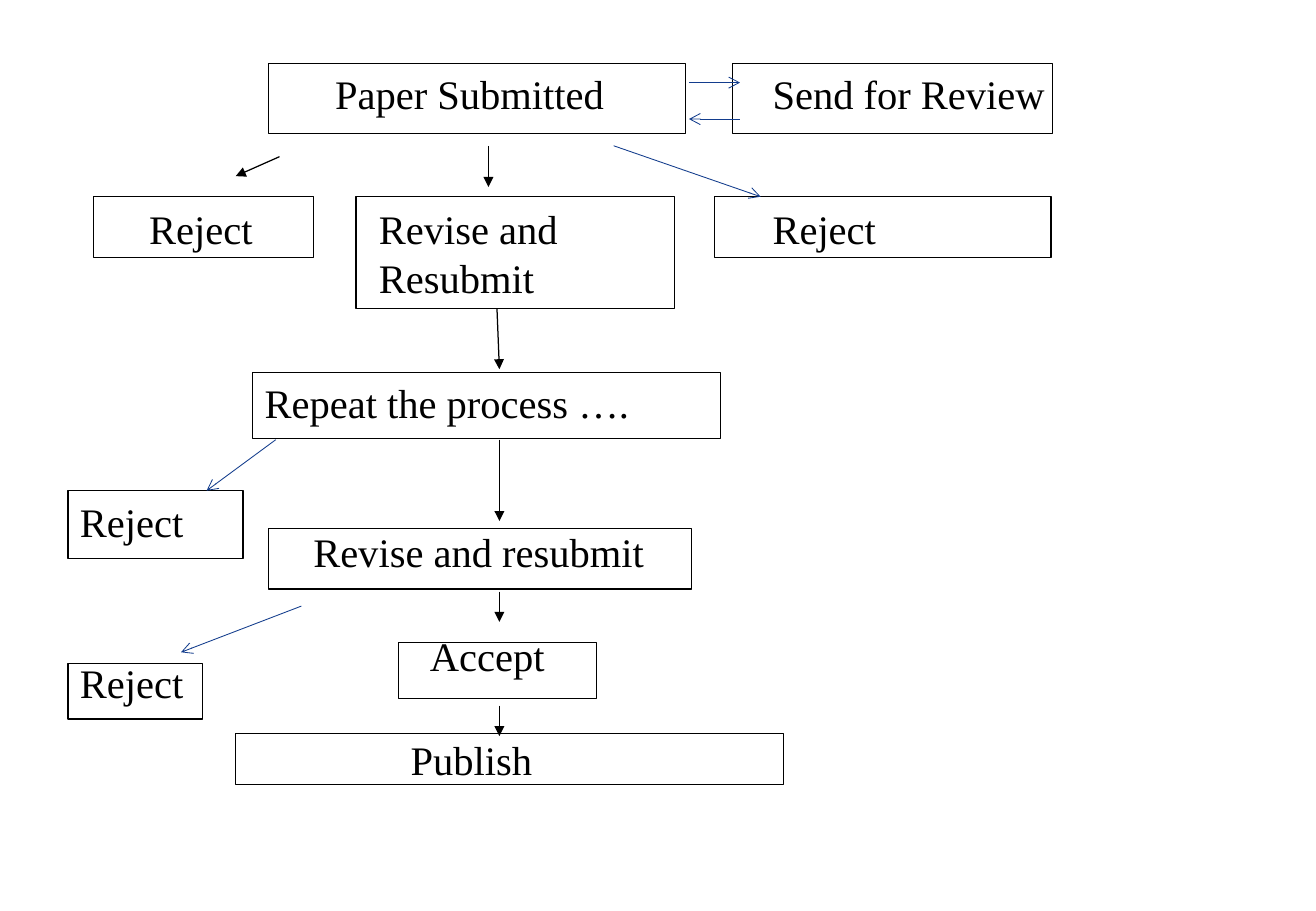
from lxml.etree import SubElement
from pptx import Presentation
from pptx.dml.color import RGBColor
from pptx.enum.shapes import MSO_CONNECTOR, MSO_SHAPE
from pptx.enum.text import MSO_AUTO_SIZE, PP_ALIGN
from pptx.oxml.ns import qn
from pptx.util import Inches, Pt

BLACK = "000000"
BLUE = "133D8D"

# left, top, width, height in inches
BOXES = [
    (2.21, 0.52, 3.43, 0.58),  # paper submitted
    (6.03, 0.52, 2.63, 0.58),  # send for review
    (0.77, 1.62, 1.81, 0.5),   # reject, left
    (2.93, 1.62, 2.62, 0.92),  # revise and resubmit
    (5.88, 1.62, 2.77, 0.5),   # reject, right
    (2.08, 3.07, 3.85, 0.54),  # repeat the process
    (0.56, 4.04, 1.44, 0.56),  # reject after repeat
    (2.21, 4.35, 3.48, 0.5),   # second revision
    (3.28, 5.29, 1.63, 0.46),  # accept
    (0.56, 5.46, 1.11, 0.46),  # reject after second revision
    (1.94, 6.04, 4.51, 0.42),  # publish
]

# text, left, top, width, height, wrap
LABELS = [
    ("Send for Review", 6.26, 0.52, 3, 0.91, True),
    ("Reject", 1.13, 1.63, 1.06, 0.5, False),
    ("Revise and Resubmit", 3.02, 1.63, 2.53, 0.91, True),
    ("Reject", 6.26, 1.63, 2.4, 0.5, True),
    ("Repeat the process ….", 2.08, 3.06, 3.95, 0.5, True),
    ("Reject", 0.56, 4.04, 1.44, 0.5, True),
    ("Revise and resubmit", 2.48, 4.29, 2.95, 0.91, False),
    ("Accept", 3.44, 5.15, 1.15, 0.5, False),
    ("Reject", 0.56, 5.37, 1.42, 0.5, True),
    ("Publish", 3.28, 6, 1.21, 0.5, False),
]

# start x, start y, end x, end y
MAIN_ARROWS = [
    (4.02, 1.2, 4.02, 1.54),
    (2.3, 1.29, 1.94, 1.45),
    (4.09, 2.54, 4.11, 3.04),
    (4.11, 3.62, 4.11, 4.29),
    (4.11, 4.87, 4.11, 5.12),
    (4.11, 5.81, 4.11, 6.06),
]
SIDE_ARROWS = [
    (5.67, 0.68, 6.09, 0.68),
    (6.09, 0.98, 5.67, 0.98),
    (5.05, 1.2, 6.26, 1.62),
    (2.27, 3.62, 1.7, 4.04),
    (2.48, 4.99, 1.49, 5.37),
]


def color(value):
    return RGBColor.from_string(value)


def add_box(slide, left, top, width, height):
    shape = slide.shapes.add_shape(
        MSO_SHAPE.RECTANGLE, Inches(left), Inches(top), Inches(width), Inches(height))
    shape.shadow.inherit = False
    shape.fill.background()
    shape.line.color.rgb = color(BLACK)
    shape.line.width = Pt(0.75)


def add_text(slide, text, left, top, width, height, wrap=True,
             align=PP_ALIGN.LEFT, size=24, font="Times New Roman", text_color=BLACK):
    shape = slide.shapes.add_textbox(
        Inches(left), Inches(top), Inches(width), Inches(height))
    frame = shape.text_frame
    frame.word_wrap = wrap
    frame.auto_size = MSO_AUTO_SIZE.SHAPE_TO_FIT_TEXT
    paragraph = frame.paragraphs[0]
    paragraph.text = text
    paragraph.alignment = align
    paragraph.font.name = font
    paragraph.font.size = Pt(size)
    paragraph.font.color.rgb = color(text_color)


def add_arrow(slide, start_x, start_y, end_x, end_y, line_color, width, head):
    """Draw a straight line with an arrowhead of type head at its end."""
    connector = slide.shapes.add_connector(
        MSO_CONNECTOR.STRAIGHT,
        Inches(start_x), Inches(start_y), Inches(end_x), Inches(end_y))
    connector.line.color.rgb = color(line_color)
    connector.line.width = Pt(width)
    properties = connector._element.spPr
    SubElement(properties.find(qn("a:ln")), qn("a:tailEnd"), type=head)
    SubElement(properties, qn("a:effectLst"))


def main():
    presentation = Presentation()
    presentation.slide_width = Inches(10.83)
    presentation.slide_height = Inches(7.5)
    slide = presentation.slides.add_slide(presentation.slide_layouts[6])

    for box in BOXES:
        add_box(slide, *box)
    add_text(slide, "Paper Submitted", 2.65, 0.52, 2.43, 0.5,
             wrap=False, align=PP_ALIGN.CENTER)
    for *label, wrap in LABELS:
        add_text(slide, *label, wrap=wrap)
    for arrow in MAIN_ARROWS:
        add_arrow(slide, *arrow, line_color=BLACK, width=0.75, head="triangle")
    for arrow in SIDE_ARROWS:
        add_arrow(slide, *arrow, line_color=BLUE, width=0.5, head="arrow")

    presentation.save("out.pptx")


if __name__ == "__main__":
    main()
